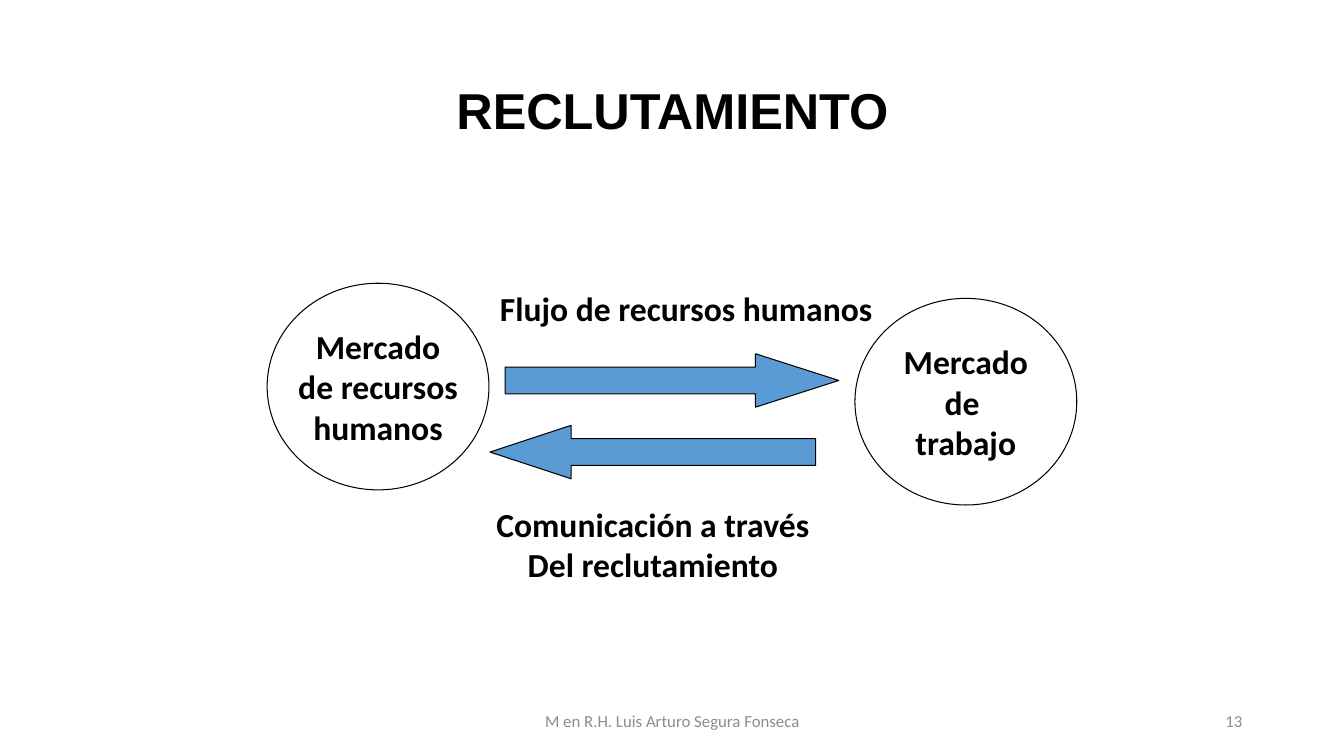
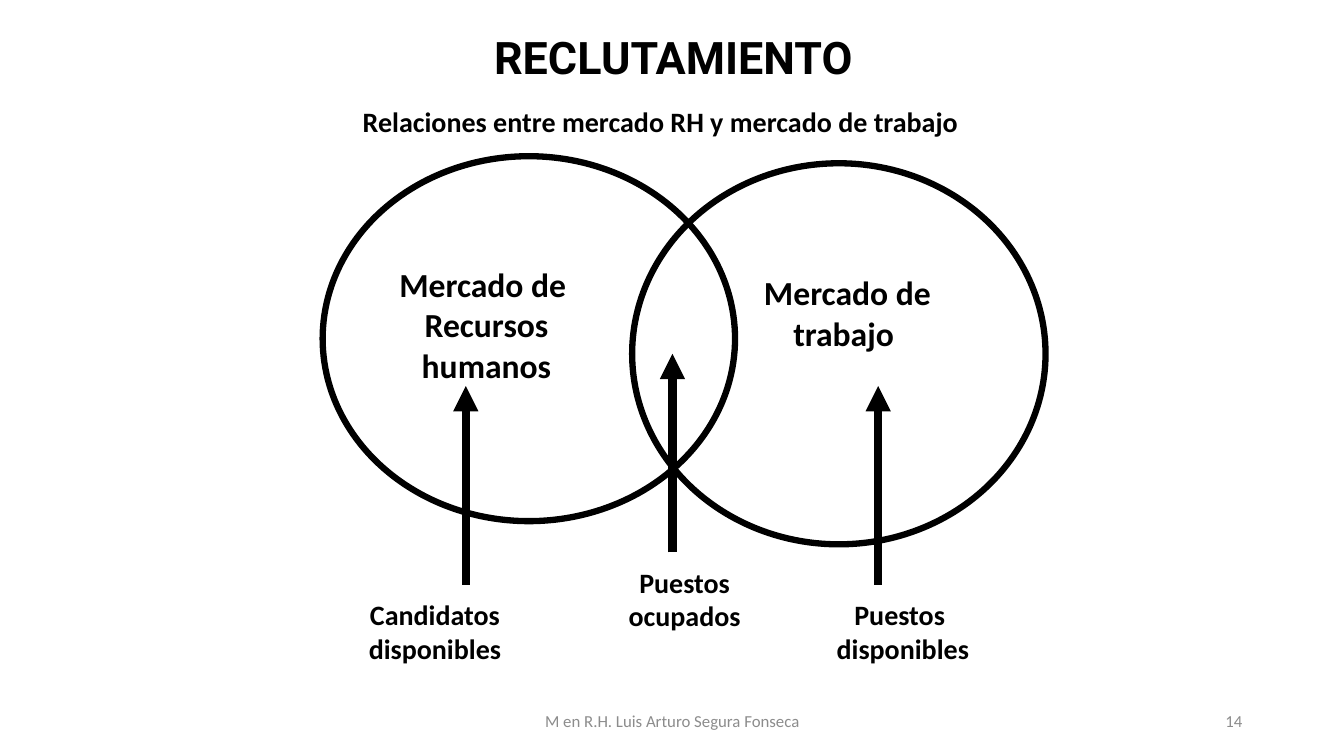
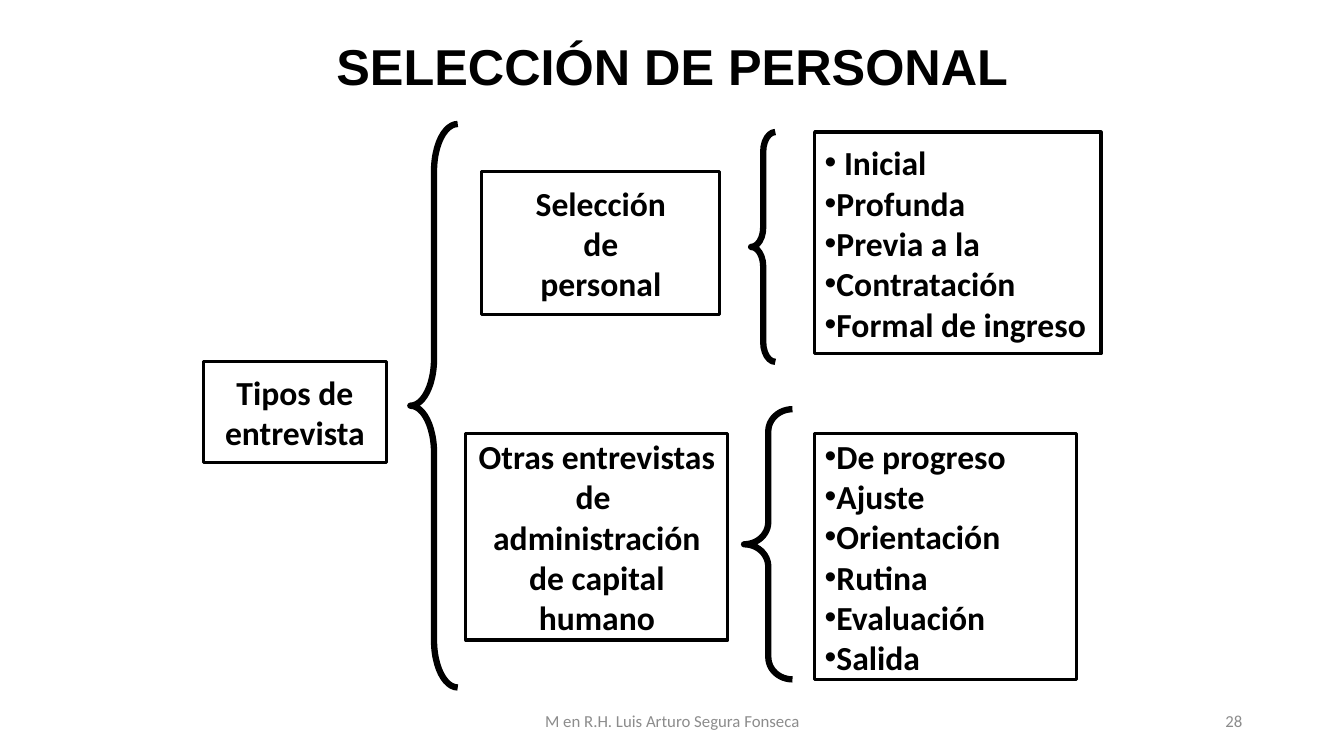
from lxml.etree import SubElement
from pptx import Presentation
from pptx.dml.color import RGBColor as RGB
from pptx.enum.shapes import MSO_CONNECTOR as LINK, MSO_SHAPE as KIND
from pptx.enum.text import MSO_ANCHOR as ANCHOR, MSO_AUTO_SIZE as FIT, PP_ALIGN as ALIGN
from pptx.oxml.ns import qn
from pptx.util import Pt

UNIT = 9144  # EMU in one px, 100 px to the inch
HUES = {"ink": "000000", "grey": "8C8C8C", "blue": "5B9BD5"}
BODY = {"name": "Calibri", "size": Pt(24), "bold": True}
SMALL = BODY | {"size": Pt(20)}
FOOT = {"name": "Calibri", "size": Pt(12), "bold": False}
HEAD = {"name": "Arial", "size": Pt(36), "bold": True}
TITLE, PAIR = 5, 3  # layouts: title only, two contents


def px(*nums):
    return [round(n * UNIT) for n in nums]


def put(obj, vals):
    for key, val in vals.items():
        setattr(obj, key, val)


def hue(name):
    return RGB.from_string(HUES[name])


class Deck:
    """Holds the style and the current slide."""

    def __init__(self):
        self.prs = Presentation()
        self.prs.slide_width, self.prs.slide_height = px(1333, 750)

    def start(self, num, title, box, look=HEAD, layout=TITLE):
        self.slide = self.prs.slides.add_slide(self.prs.slide_layouts[layout])
        self.shapes = self.slide.shapes
        head = self.shapes.title
        self.place(head, box)
        self.letter(head, title, look, anchor=ANCHOR.MIDDLE, wrap=True, gap=0.9)
        self.label("M en R.H. Luis Arturo Segura Fonseca", (442, 695, 450, 40),
                   FOOT, "grey", anchor=ANCHOR.MIDDLE)
        self.label(str(num), (942, 695, 300, 40), FOOT, "grey",
                   anchor=ANCHOR.MIDDLE, align=ALIGN.RIGHT, wrap=True)

    def place(self, shape, box):
        put(shape, dict(zip(("left", "top", "width", "height"), px(*box))))

    def letter(self, shape, text, look=BODY, ink="ink", anchor=ANCHOR.TOP,
               align=ALIGN.CENTER, wrap=False, gap=1.0):
        """Fill a shape with one paragraph for each line of text."""
        frame = shape.text_frame
        frame.text = text
        put(frame, {"auto_size": FIT.NONE, "word_wrap": wrap,
                    "vertical_anchor": anchor})
        for para in frame.paragraphs:
            put(para, {"alignment": align, "line_spacing": gap,
                       "space_before": Pt(0)})
            for run in para.runs:
                put(run.font, look)
                run.font.color.rgb = hue(ink)

    def label(self, text, box, look=BODY, ink="ink", **form):
        self.letter(self.shapes.add_textbox(*px(*box)), text, look, ink, **form)

    def edge(self, shape, width):
        shape.line.color.rgb = hue("ink")
        shape.line.width = Pt(width)

    def draw(self, kind, box, width, text="", fill=None, bends=()):
        shape = self.shapes.add_shape(kind, *px(*box))
        shape.shadow.inherit = False
        if fill:
            shape.fill.solid()
            shape.fill.fore_color.rgb = hue(fill)
        else:
            shape.fill.background()
        self.edge(shape, width)
        for i, bend in enumerate(bends):
            shape.adjustments[i] = bend
        if text:
            self.letter(shape, text, anchor=ANCHOR.MIDDLE)

    def arrow(self, x, low, high):
        link = self.shapes.add_connector(LINK.STRAIGHT, *px(x, low, x, high))
        self.edge(link, 6)
        props = link._element.spPr
        SubElement(props.find(qn("a:ln")), qn("a:tailEnd"), type="triangle")
        SubElement(props, qn("a:effectLst"))

    def items(self, slot, text, box):
        """Turn a body placeholder into a framed list with tight bullets."""
        body = self.slide.placeholders[slot]
        self.place(body, box)
        self.edge(body, 2.25)
        self.letter(body, text, anchor=ANCHOR.MIDDLE, align=ALIGN.LEFT, wrap=True)
        for para in body.text_frame.paragraphs:
            props = para._p.get_or_add_pPr()
            for key in ("marL", "indent"):
                props.set(key, "0")


def flow(deck):
    deck.start(13, "RECLUTAMIENTO", (92, 40, 1150, 145))
    for x, y, text in ((265, 281, "Mercado\nde recursos\nhumanos"),
                       (848, 296, "Mercado\nde \ntrabajo")):
        deck.draw(KIND.OVAL, (x, y, 220, 205), 0.75, text)
    for kind, box, tip in ((KIND.RIGHT_ARROW, (501, 351, 331, 53), 1.56),
                           (KIND.LEFT_ARROW, (486, 422, 323, 53), 1.52)):
        deck.draw(kind, box, 0.75, fill="blue", bends=(0.5, tip))
    deck.label("Flujo de recursos humanos", (486, 281, 393, 50),
               align=ALIGN.LEFT, wrap=True)
    deck.label("Comunicación a través\nDel reclutamiento", (478, 495, 339, 91))


def venn(deck):
    deck.start(14, "RECLUTAMIENTO", (218, 28, 900, 63),
               HEAD | {"name": "Roboto", "size": Pt(32)})
    for box in ((627, 162, 410, 378), (320, 155, 409, 362)):
        deck.draw(KIND.OVAL, box, 4.5)
    deck.label("Mercado de \nRecursos\nhumanos", (385, 257, 195, 131))
    deck.label("Mercado de\ntrabajo ", (747, 265, 187, 131))
    for tail, left, top, wide, text in (
            (462, 355, 588, 153, "Candidatos\ndisponibles"),
            (667, 613, 556, 132, "Puestos\nocupados"),
            (871, 819, 588, 153, "Puestos \ndisponibles")):
        deck.arrow(tail, top - 8, top - 205)
        deck.label(text, (left, top, wide, 77), SMALL)
    deck.label("Relaciones entre mercado RH y mercado de trabajo",
               (347, 99, 616, 44), SMALL)


def tree(deck):
    deck.start(28, "SELECCIÓN DE PERSONAL", (217, 30, 900, 77), layout=PAIR)
    for text, box in (
            ("Tipos de\nentrevista", (202, 359, 181, 100)),
            ("Selección\nde\npersonal", (478, 170, 236, 142)),
            ("Otras entrevistas\nde \nadministración\nde capital\nhumano",
             (462, 430, 260, 205))):
        deck.draw(KIND.RECTANGLE, box, 2.25, text)
    for box, curl in (((407, 123, 47, 559), 0.99), ((745, 131, 24, 228), 0.81),
                      ((738, 406, 48, 268), 0.46)):
        deck.draw(KIND.LEFT_BRACE, box, 4.5, bends=(curl, 0.5))
    deck.items(1, " Inicial\nProfunda\nPrevia a la\nContratación\nFormal de ingreso",
               (808, 131, 284, 220))
    deck.items(2, "De progreso\nAjuste\nOrientación\nRutina\nEvaluación\nSalida",
               (808, 430, 260, 244))


def main():
    deck = Deck()
    for build in (flow, venn, tree):
        build(deck)
    deck.prs.save("out.pptx")


if __name__ == "__main__":
    main()
